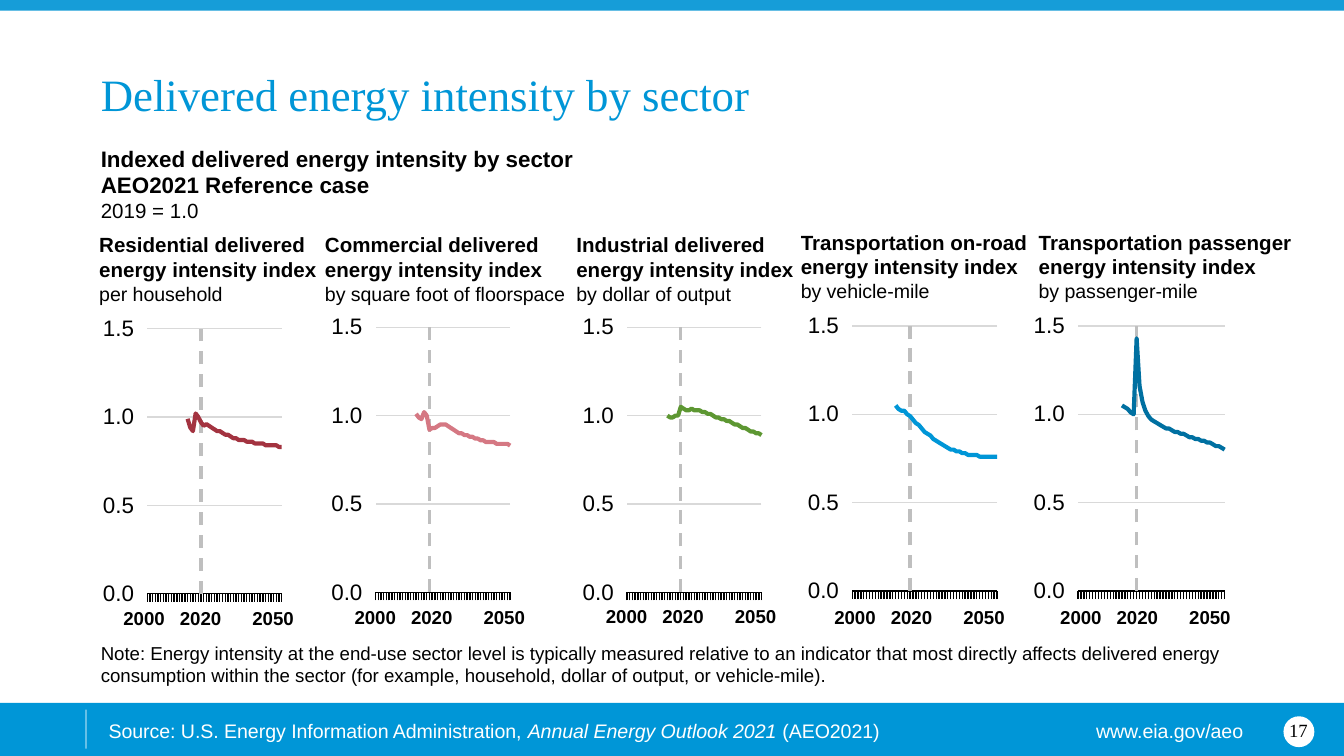
from lxml import etree
from pptx import Presentation
from pptx.chart.data import CategoryChartData
from pptx.dml.color import RGBColor
from pptx.enum.chart import XL_CHART_TYPE, XL_TICK_LABEL_POSITION, XL_TICK_MARK
from pptx.enum.dml import MSO_LINE
from pptx.enum.shapes import MSO_CONNECTOR, MSO_SHAPE
from pptx.enum.text import MSO_ANCHOR, MSO_AUTO_SIZE, PP_ALIGN
from pptx.oxml.ns import qn
from pptx.util import Inches, Pt

LINE_CHART = XL_CHART_TYPE.LINE
LABELS_LOW, LABELS_NONE = XL_TICK_LABEL_POSITION.LOW, XL_TICK_LABEL_POSITION.NONE
TICK_OUT, TICK_NONE = XL_TICK_MARK.OUTSIDE, XL_TICK_MARK.NONE
DASH = MSO_LINE.DASH
STRAIGHT = MSO_CONNECTOR.STRAIGHT
RECTANGLE, OVAL = MSO_SHAPE.RECTANGLE, MSO_SHAPE.OVAL
TOP, MIDDLE, BOTTOM = MSO_ANCHOR.TOP, MSO_ANCHOR.MIDDLE, MSO_ANCHOR.BOTTOM
LEFT, CENTER, RIGHT = PP_ALIGN.LEFT, PP_ALIGN.CENTER, PP_ALIGN.RIGHT
NO_AUTOFIT = MSO_AUTO_SIZE.NONE

BLUE, WHITE, BLACK = "0096D7", "FFFFFF", "000000"
BOX_INSETS = (0.1, 0.05, 0.1, 0.05)


def color(hex_string):
    return RGBColor.from_string(hex_string)


def write(box, place, paragraphs, align=LEFT, anchor=TOP, insets=BOX_INSETS, tabs=()):
    box.left, box.top, box.width, box.height = [Inches(value) for value in place]
    frame = box.text_frame
    margins = zip(("margin_left", "margin_top", "margin_right", "margin_bottom"), insets)
    settings = {"word_wrap": True, "auto_size": NO_AUTOFIT, "vertical_anchor": anchor}
    settings.update((name, Inches(value)) for name, value in margins)
    for name, value in settings.items():
        setattr(frame, name, value)
    for number, spans in enumerate(paragraphs):
        para = frame.add_paragraph() if number else frame.paragraphs[0]
        para.alignment, para.space_before = align, Pt(0)
        properties = para._p.get_or_add_pPr()
        if box.is_placeholder:
            properties.set("marL", "0")
            properties.set("indent", "0")
            etree.SubElement(properties, qn("a:buNone"))
        if tabs:
            tab_list = etree.SubElement(properties, qn("a:tabLst"))
            for stop in tabs:
                etree.SubElement(tab_list, qn("a:tab"), pos=str(int(Inches(stop))), algn="l")
        for text, size, format_values in spans:
            span = para.add_run()
            span.text = text
            values = {"name": "Arial", "size": Pt(size), "bold": False, "italic": False}
            values.update(format_values)
            span.font.color.rgb = color(values.pop("color", BLACK))
            for name, value in values.items():
                setattr(span.font, name, value)


deck = Presentation()
deck.slide_width, deck.slide_height = Inches(10), Inches(45 / 8)
page = deck.slides.add_slide(deck.slide_layouts[3])
shapes = page.shapes
title, subtitle, note = page.placeholders

bold = {"bold": True}
white = {"color": WHITE}

for kind, place, fill in (
    (RECTANGLE, (0, 5.23, 10, 0.4), BLUE),
    (RECTANGLE, (0, 0, 10, 0.08), "169DD8"),
    (OVAL, (9.55, 5.33, 0.23, 0.23), WHITE),
):
    shape = shapes.add_shape(kind, *[Inches(value) for value in place])
    shape.shadow.inherit = False
    shape.fill.solid()
    shape.fill.fore_color.rgb = color(fill)
    shape.line.fill.background()

divider = shapes.add_connector(STRAIGHT, Inches(0.64), Inches(5.28), Inches(0.64), Inches(5.57))
divider.line.color.rgb = color(WHITE)
divider.line.width = Pt(1)
etree.SubElement(divider.line._ln.find(".//" + qn("a:srgbClr")), qn("a:alpha"), val="40000")
etree.SubElement(divider._element.spPr, qn("a:effectLst"))

write(title, (0.75, 0.07, 8.75, 0.83),
      [[("Delivered energy intensity by sector", 24, {"name": "Times New Roman", "color": BLUE})]],
      anchor=BOTTOM, insets=(0, 0, 0, 0))
write(subtitle, (0.75, 0.92, 8.7, 0.74),
      [[("Indexed delivered energy intensity by sector", 12, bold)],
       [("AEO2021 Reference case", 12, bold)],
       [("2019 = 1.0", 11, {})]],
      anchor=BOTTOM, insets=(0, 0, 0.1, 0))
write(note, (0.75, 4.88, 8.75, 0.23),
      [[("Note: Energy intensity at the end-use sector level is typically measured relative to an "
         "indicator that most directly affects delivered energy consumption within the sector "
         "(for example, household, dollar of output, or vehicle-mile).", 10, {})]],
      anchor=BOTTOM, insets=(0, 0.05, 0, 0))

footer = shapes.add_textbox(0, 0, 0, 0)
write(footer, (0.71, 5.3, 6.66, 0.28),
      [[("Source: U.S. Energy Information Administration, ", 10.5, white),
        ("Annual Energy Outlook 2021", 10.5, {"color": WHITE, "italic": True}),
        (" (AEO2021)", 10.5, white)]])
website = shapes.add_textbox(0, 0, 0, 0)
write(website, (7.73, 5.3, 1.62, 0.28), [[("www.eia.gov/aeo", 10.5, white)]], align=RIGHT)
page_number = shapes.add_textbox(0, 0, 0, 0)
write(page_number, (9.45, 5.28, 0.42, 0.3), [[("17", 10, {"name": "Times New Roman"})]],
      align=CENTER, anchor=MIDDLE)

sectors = (
    ("Residential delivered", "per household", (0.64, 1.68, 1.96, 0.66), (0.82, 4.47),
     (0.71, 1.99, 1.43), 0.27, "A33340",
     (0.99, 0.94, 0.92, 1.02, 1, 0.97, 0.95, 0.96, 0.95, 0.94, 0.93, 0.92, 0.92, 0.91, 0.9, 0.9,
      0.89, 0.88, 0.88, 0.87, 0.87, 0.87, 0.86, 0.86, 0.86, 0.85, 0.85, 0.85, 0.85, 0.84, 0.84,
      0.84, 0.84, 0.84, 0.83, 0.83)),
    ("Commercial delivered", "by square foot of floorspace", (2.32, 1.68, 2.04, 0.65), (2.54, 4.46),
     (2.41, 1.98, 1.43), 0.27, "D57883",
     (1.01, 0.99, 0.98, 1.02, 1, 0.92, 0.93, 0.93, 0.94, 0.95, 0.95, 0.95, 0.94, 0.93, 0.92, 0.91,
      0.9, 0.9, 0.89, 0.89, 0.88, 0.88, 0.87, 0.87, 0.86, 0.86, 0.85, 0.85, 0.85, 0.85, 0.84,
      0.84, 0.84, 0.84, 0.84, 0.83)),
    ("Industrial delivered", "by dollar of output", (4.19, 1.68, 1.96, 0.66), (4.41, 4.45),
     (4.28, 1.98, 1.43), 0.27, "5D9732",
     (1, 0.99, 0.99, 1, 1, 1.05, 1.04, 1.03, 1.03, 1.04, 1.03, 1.03, 1.03, 1.02, 1.02, 1.01, 1.01,
      1, 0.99, 0.99, 0.98, 0.98, 0.97, 0.97, 0.96, 0.95, 0.95, 0.94, 0.93, 0.93, 0.92, 0.91, 0.91,
      0.9, 0.9, 0.89)),
    ("Transportation on-road", "by vehicle-mile", (5.86, 1.66, 2.32, 0.66), (6.11, 4.46),
     (5.91, 1.97, 1.54), 0.28, BLUE,
     (1.05, 1.03, 1.02, 1.02, 1, 0.99, 0.97, 0.95, 0.94, 0.92, 0.9, 0.89, 0.88, 0.86, 0.85, 0.84,
      0.83, 0.82, 0.81, 0.8, 0.8, 0.79, 0.79, 0.78, 0.78, 0.77, 0.77, 0.77, 0.77, 0.76, 0.76,
      0.76, 0.76, 0.76, 0.76, 0.76)),
    ("Transportation passenger", "by passenger-mile", (7.63, 1.66, 2.32, 0.65), (7.79, 4.46),
     (7.6, 1.97, 1.56), 0.27, "0070A1",
     (1.05, 1.04, 1.03, 1.01, 1, 1.43, 1.16, 1.07, 1.02, 0.99, 0.97, 0.96, 0.95, 0.94, 0.93, 0.92,
      0.92, 0.91, 0.9, 0.9, 0.89, 0.89, 0.88, 0.87, 0.87, 0.86, 0.86, 0.85, 0.85, 0.84, 0.84,
      0.83, 0.82, 0.82, 0.81, 0.8)),
)

for sector, unit, heading_place, years_corner, chart_place, plot_left, line_color, values in sectors:
    heading = shapes.add_textbox(0, 0, 0, 0)
    write(heading, heading_place,
          [[(sector + " energy intensity index", 11, bold)], [(unit, 10.5, {})]])
    years = shapes.add_textbox(0, 0, 0, 0)
    write(years, (*years_corner, 1.5, 0.27), [[("2000\t2020\t2050", 10, bold)]],
          insets=(0.1, 0.05, 0, 0.05), tabs=(0.42, 0.96))

    data = CategoryChartData()
    data.categories = [str(number) for number in range(1, 52)]
    data.add_series("Series 1", [None] * 15 + list(values))
    place = [Inches(value) for value in (*chart_place, 2.53)]
    chart = shapes.add_chart(LINE_CHART, *place, data).chart
    chart.has_legend = chart.has_title = False
    chart.font.name, chart.font.size = "Arial", Pt(10)
    chart.font.color.rgb = color(BLACK)
    chart.plots[0].vary_by_categories = False

    series = chart.plots[0].series[0]
    series.smooth = False
    series.format.line.color.rgb = color(line_color)
    series.format.line.width = Pt(2.25)

    category_axis, value_axis = chart.category_axis, chart.value_axis
    value_element = value_axis._element
    value_element.remove(value_element.find(qn("c:crosses")))
    for tag, value in (("crossesAt", "21"), ("crossBetween", "midCat")):
        etree.SubElement(value_element, qn("c:" + tag), val=value)
    for axis, format_values in (
        (category_axis, {"tick_label_position": LABELS_NONE, "major_tick_mark": TICK_OUT,
                         "has_major_gridlines": False}),
        (value_axis, {"tick_label_position": LABELS_LOW, "major_tick_mark": TICK_NONE,
                      "has_major_gridlines": True, "minimum_scale": 0, "maximum_scale": 1.5,
                      "major_unit": 0.5}),
    ):
        for name, value in format_values.items():
            setattr(axis, name, value)
    value_axis.tick_labels.font.size = Pt(12)
    value_axis.tick_labels.number_format = "#,##0.0"
    value_axis.tick_labels.number_format_is_linked = False
    value_axis.format.line.dash_style = DASH
    for line, shade, width in (
        (category_axis.format.line, BLACK, 0.75),
        (value_axis.format.line, "BFBFBF", 1.75),
        (value_axis.major_gridlines.format.line, "D9D9D9", 0.75),
    ):
        line.color.rgb = color(shade)
        line.width = Pt(width)

    plot_area = chart._chartSpace.chart.plotArea
    for old_layout in plot_area.findall(qn("c:layout")):
        plot_area.remove(old_layout)
    layout = etree.Element(qn("c:layout"))
    plot_area.insert(0, layout)
    manual = etree.SubElement(layout, qn("c:manualLayout"))
    for tag, value in (("layoutTarget", "inner"), ("xMode", "edge"), ("yMode", "edge"),
                       ("x", plot_left), ("y", 0.18), ("w", 0.7), ("h", 0.78)):
        etree.SubElement(manual, qn("c:" + tag), val=str(value))

deck.save("out.pptx")
